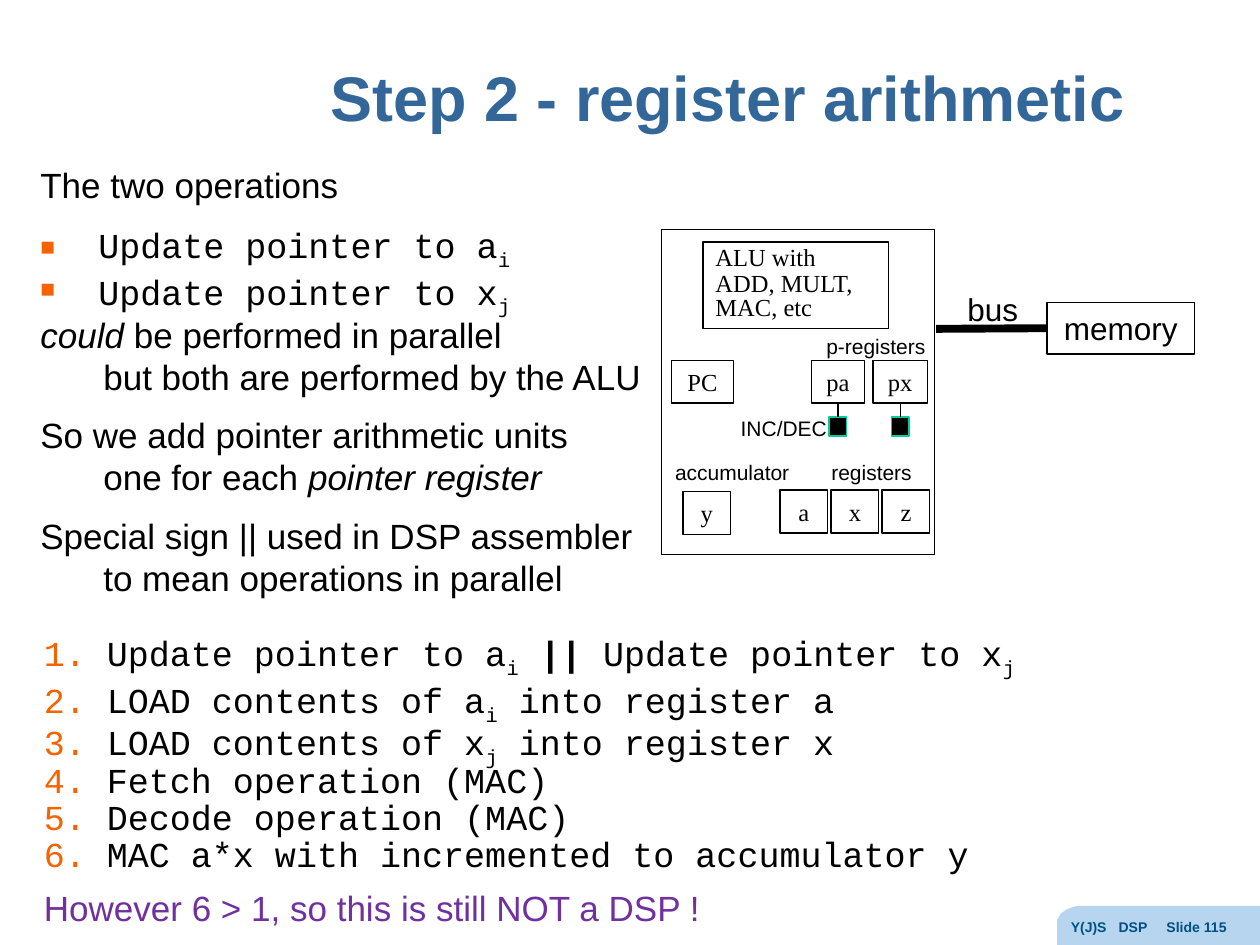
from lxml import etree
from pptx import Presentation
from pptx.dml.color import RGBColor
from pptx.enum.shapes import MSO_CONNECTOR, MSO_SHAPE
from pptx.enum.text import MSO_ANCHOR, MSO_AUTO_SIZE, PP_ALIGN
from pptx.oxml.ns import qn
from pptx.util import Inches, Pt

BLACK = RGBColor(0x00, 0x00, 0x00)
WHITE = RGBColor(0xFF, 0xFF, 0xFF)
TITLE_BLUE = RGBColor(0x33, 0x66, 0x99)
FOOTER_BLUE = RGBColor(0x00, 0x50, 0x81)
TAB_BLUE = RGBColor(0xB7, 0xD5, 0xEF)
ORANGE = RGBColor(0xF4, 0x63, 0x00)
PURPLE = RGBColor(0x70, 0x30, 0xA0)
GREEN = RGBColor(0x00, 0xCC, 0x99)

SANS, MONO, SERIF = "Arial", "Courier New", "Times New Roman"
SQUARE = ("buChar", {"char": "■"}, 70)
NUMBER = ("buAutoNum", {"type": "arabicPeriod"}, 100)
NO_BULLET = ("buNone", {}, None)


def add_element(parent, tag, **attributes):
    return etree.SubElement(parent, qn(f"a:{tag}"), attributes)


class DiagramSlide:
    def __init__(self, slide):
        self.slide = slide
        self.shapes = slide.shapes

    def font(self, font, name, size, color=BLACK, bold=False):
        font.name, font.size, font.bold = name, Pt(size), bold
        font.color.rgb = color

    def title(self, text, left, top, width, height):
        title = self.shapes.title
        self.place(title, left, top, width, height)
        title.text_frame.vertical_anchor = MSO_ANCHOR.MIDDLE
        title.text_frame.text = text
        paragraph = title.text_frame.paragraphs[0]
        paragraph.alignment = PP_ALIGN.CENTER
        paragraph.line_spacing = 0.9
        self.font(paragraph.font, SANS, 36, TITLE_BLUE, bold=True)

    def place(self, shape, left, top, width, height):
        shape.left, shape.top = Inches(left), Inches(top)
        shape.width, shape.height = Inches(width), Inches(height)

    def fill_list(self, frame, items, hanging):
        """Each item: runs, font, line spacing, space before, bullet, level, colour."""
        frame.word_wrap = True
        frame.auto_size = MSO_AUTO_SIZE.NONE
        for index, (runs, name, spacing, before, bullet, level, color) in enumerate(items):
            paragraph = frame.add_paragraph() if index else frame.paragraphs[0]
            paragraph.level = level
            paragraph.line_spacing, paragraph.space_before = spacing, Pt(before)
            self.font(paragraph.font, name, 20, color)
            self.bullet(paragraph, bullet, hanging, level)
            for text, style in runs:
                run = paragraph.add_run()
                run.text = text
                if style == "italic":
                    run.font.italic = True
                elif style == "bold":
                    run.font.bold = True
                elif style == "sub":
                    run.font._element.set("baseline", "-25000")

    def bullet(self, paragraph, bullet, hanging, level):
        tag, attributes, size = bullet
        properties = paragraph._p.get_or_add_pPr()
        properties.set("marL", str(Inches(hanging + 0.5 * level)))
        properties.set("indent", str(-Inches(hanging)))
        # Bullet settings precede the default run properties in the schema.
        default_font = properties.find(qn("a:defRPr"))
        properties.remove(default_font)
        if size:
            add_element(add_element(properties, "buClr"), "srgbClr", val=str(ORANGE))
            add_element(properties, "buSzPct", val=str(size * 1000))
        add_element(properties, tag, **attributes)
        properties.append(default_font)

    def box(self, text, left, top, width, height, name=SERIF, size=14,
            fill=None, line=BLACK):
        box = self.shapes.add_shape(MSO_SHAPE.RECTANGLE, Inches(left), Inches(top),
                                    Inches(width), Inches(height))
        box.shadow.inherit = False
        if fill is None:
            box.fill.background()
        else:
            box.fill.solid()
            box.fill.fore_color.rgb = fill
        box.line.color.rgb = line
        box.line.width = Pt(0.75)
        if text:
            box.text_frame.text = text
            box.text_frame.word_wrap = False
            for paragraph in box.text_frame.paragraphs:
                paragraph.alignment = PP_ALIGN.CENTER
                self.font(paragraph.font, name, size)
        return box

    def text_box(self, left, top, width, height):
        return self.shapes.add_textbox(Inches(left), Inches(top), Inches(width),
                                       Inches(height)).text_frame

    def label(self, text, left, top, width, height=0.3, size=12):
        frame = self.text_box(left, top, width, height)
        frame.text = text
        self.font(frame.paragraphs[0].font, SANS, size)

    def line(self, x1, y1, x2, y2, width=0.75):
        line = self.shapes.add_connector(MSO_CONNECTOR.STRAIGHT, Inches(x1), Inches(y1),
                                         Inches(x2), Inches(y2))
        line.line.color.rgb = BLACK
        line.line.width = Pt(width)
        add_element(line._element.spPr, "effectLst")
        return line

    def footer(self, text):
        outline = [(10, 7.5), (8.39, 7.5), (8.39, 7.34), (8.39, 7.3), (8.42, 7.25),
                   (8.46, 7.22), (8.51, 7.2), (8.55, 7.19)]
        builder = self.shapes.build_freeform(Inches(10), Inches(7.19), scale=1.0)
        builder.add_line_segments([(Inches(x), Inches(y)) for x, y in outline])
        corner = builder.convert_to_shape()
        corner.shadow.inherit = False
        corner.fill.solid()
        corner.fill.fore_color.rgb = TAB_BLUE
        corner.line.fill.background()
        frame = self.text_box(8.4, 7.24, 1.6, 0.26)
        frame.text = text
        paragraph = frame.paragraphs[0]
        tabs = add_element(paragraph._p.get_or_add_pPr(), "tabLst")
        for stop in (0.38, 0.76):
            add_element(tabs, "tab", pos=str(Inches(stop)), algn="l")
        self.font(paragraph.font, SANS, 8, FOOTER_BLUE, bold=True)


def plain(*runs):
    return (runs, SANS, 1.2, 4.8, NO_BULLET, 0, BLACK)


def tight(*runs, level=1):
    return (runs, SANS, 0.8, 4.8, NO_BULLET, level, BLACK)


def pointer(spacing, before, name, index):
    return ([(f"Update pointer to {name}", ""), (index, "sub")],
            MONO, spacing, before, SQUARE, 0, BLACK)


def step(*runs, spacing=0.8, before=2):
    return (runs, MONO, spacing, before, NUMBER, 0, BLACK)


def load(name, index):
    return step((f"LOAD contents of {name}", ""), (index, "sub"),
                (f" into register {name}", ""))


def add_processor(page):
    processor = (5.25, 1.82, 2.17, 2.58)
    page.box("", *processor, fill=WHITE)
    memory = page.box("memory", 8.31, 2.4, 1.17, 0.41, SANS, 18)
    page.line(7.43, 2.61, 8.31, 2.61, 4.5).end_connect(memory, 1)
    page.label("bus", 7.58, 2.25, 0.79, 0.4, 18)

    alu = page.box("ALU with\nADD, MULT, MAC, etc", 5.58, 1.92, 1.47, 0.69)
    alu.text_frame.word_wrap = True
    alu.text_frame.vertical_anchor = MSO_ANCHOR.TOP
    for paragraph in alu.text_frame.paragraphs:
        paragraph.alignment = PP_ALIGN.LEFT
        paragraph.line_spacing, paragraph.space_before = 0.8, Pt(1.4)

    page.box("PC", 5.33, 2.86, 0.49, 0.34)
    for name, left, width in (("pa", 6.44, 0.42), ("px", 6.93, 0.43)):
        register = page.box(name, left, 2.86, width, 0.34)
        unit = page.box("", left + width / 2 - 0.07, 3.31, 0.14, 0.15,
                        fill=BLACK, line=GREEN)
        link = page.line(left + width / 2, 3.31, left + width / 2, 3.2)
        link.begin_connect(unit, 0)
        link.end_connect(register, 2)

    page.box("y", 5.42, 3.9, 0.38, 0.34)
    for column, name in enumerate("axz"):
        page.box(name, 6.19 + 0.405 * column, 3.89, 0.38, 0.34)

    page.label("p-registers", 6.46, 2.6, 1.04)
    page.label("INC/DEC", 5.78, 3.25, 0.89)
    page.label("accumulator", 5.26, 3.6, 1.24)
    page.label("registers", 6.5, 3.6, 0.9)


def main():
    presentation = Presentation()
    presentation.slide_width, presentation.slide_height = Inches(10), Inches(7.5)
    page = DiagramSlide(presentation.slides.add_slide(presentation.slide_layouts[1]))
    page.footer("Y(J)S\tDSP\tSlide 115")
    page.title("Step 2 - register arithmetic", 2.12, 0.18, 7.31, 1.25)

    operations = page.slide.placeholders[1]
    page.place(operations, 0.22, 1.18, 5.01, 3.93)
    page.fill_list(operations.text_frame, [
        plain(("The two operations", "")),
        pointer(1.2, 4.8, "a", "i"),
        pointer(0.8, 2, "x", "j"),
        tight(("could", "italic"), (" be performed in parallel", ""), level=0),
        tight(("but both are performed by the ALU", "")),
        plain(("So we add pointer arithmetic units", "")),
        tight(("one for each ", ""), ("pointer register", "italic")),
        plain(("Special sign || used in DSP assembler", "")),
        tight(("to mean operations in parallel", "")),
    ], 0.46)

    page.fill_list(page.text_box(0.25, 4.89, 8.47, 2.43), [
        step(("Update pointer to a", ""), ("i", "sub"), (" || ", "bold"),
             ("Update pointer to x", ""), ("j", "sub"), spacing=1.2, before=4),
        load("a", "i"),
        load("x", "j"),
        step(("Fetch operation (MAC)", "")),
        step(("Decode operation (MAC)", "")),
        step(("MAC a*x with incremented to accumulator y", "")),
        ([("However 6 > 1, so this is still NOT a DSP !", "")],
         SANS, 1.2, 2, NO_BULLET, 0, PURPLE),
    ], 0.5)

    add_processor(page)
    presentation.save("out.pptx")


if __name__ == "__main__":
    main()
